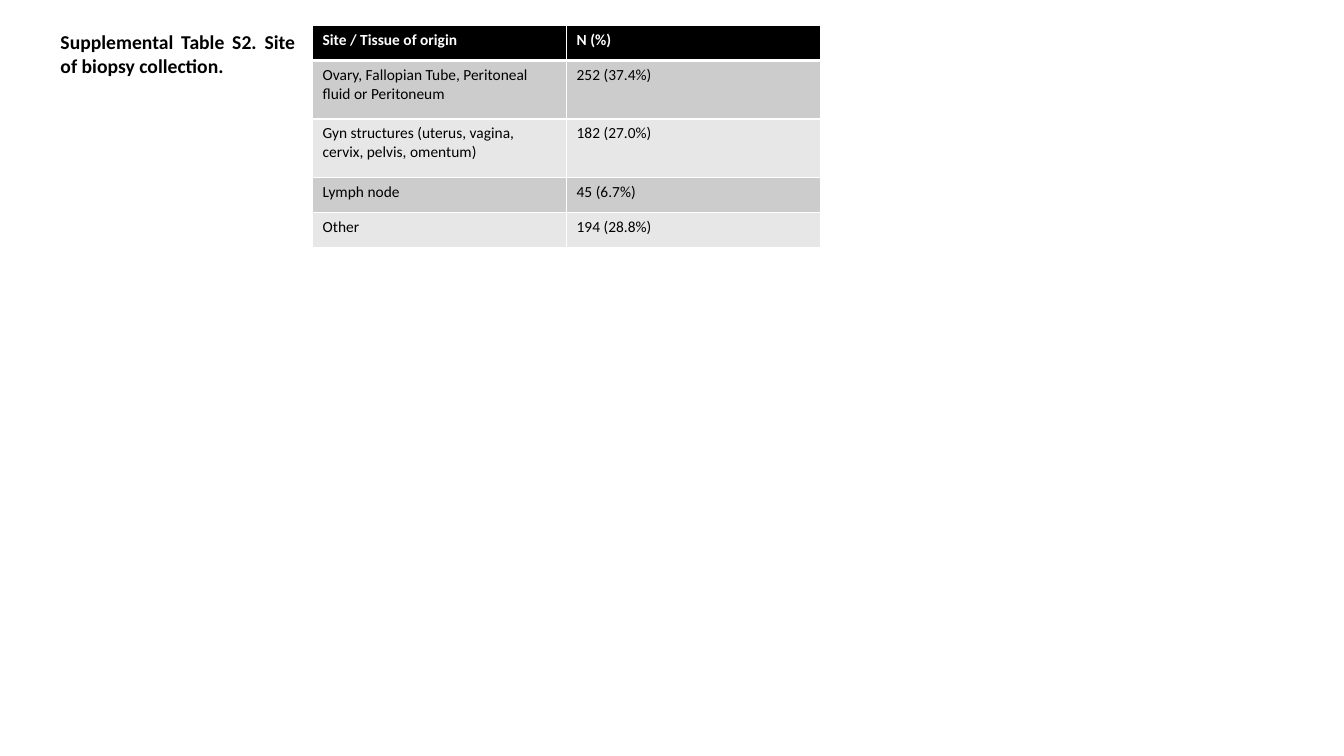
"""Build the slide listing the sites of biopsy collection."""
from dataclasses import dataclass

from lxml.etree import SubElement
from pptx import Presentation
from pptx.dml.color import RGBColor
from pptx.enum.text import MSO_ANCHOR, MSO_AUTO_SIZE, PP_ALIGN
from pptx.oxml.ns import qn
from pptx.slide import Slide
from pptx.table import _Cell as Cell
from pptx.util import Inches, Pt

FONT = "Calibri"
BLACK, WHITE = "000000", "FFFFFF"
BANDS = ("CCCCCC", "E7E7E7")


@dataclass(frozen=True)
class SiteRow:
    site: str
    count: str
    height: float = 0.35


HEADER = SiteRow("Site / Tissue of origin", "N (%)")
SITES = [
    SiteRow("Ovary, Fallopian Tube, Peritoneal fluid or Peritoneum", "252 (37.4%)", 0.58),
    SiteRow("Gyn structures (uterus, vagina, cervix, pelvis, omentum)", "182 (27.0%)", 0.58),
    SiteRow("Lymph node", "45 (6.7%)"),
    SiteRow("Other", "194 (28.8%)"),
]


def rgb(color: str) -> RGBColor:
    return RGBColor.from_string(color)


def style_font(p, size: float, color: str, bold: bool) -> None:
    p.font.name = FONT
    p.font.size = Pt(size)
    p.font.bold = bold
    p.font.color.rgb = rgb(color)


def add_title(s: Slide, text: str) -> None:
    sp = s.shapes.title
    sp.left, sp.top = Inches(0.5), Inches(0.25)
    sp.width, sp.height = Inches(2.53), Inches(0.57)
    tf = sp.text_frame
    tf.text = text
    tf.word_wrap = True
    tf.auto_size = MSO_AUTO_SIZE.SHAPE_TO_FIT_TEXT
    tf.vertical_anchor = MSO_ANCHOR.TOP
    p = tf.paragraphs[0]
    p.alignment = PP_ALIGN.JUSTIFY
    style_font(p, 14, BLACK, True)


def set_borders(cell: Cell, top: float, bottom: float) -> None:
    tc_pr = cell._tc.get_or_add_tcPr()
    for side, width in (("L", 1), ("R", 1), ("T", top), ("B", bottom)):
        ln = SubElement(tc_pr, qn(f"a:ln{side}"), w=str(Pt(width)))
        SubElement(SubElement(ln, qn("a:solidFill")), qn("a:srgbClr"), val=WHITE)


def fill_cell(cell: Cell, text: str, row: int) -> None:
    is_header = row == 0
    set_borders(cell, 3 if row == 1 else 1, 3 if is_header else 1)
    cell.fill.solid()
    cell.fill.fore_color.rgb = rgb(BLACK if is_header else BANDS[(row - 1) % 2])
    cell.text = text
    style_font(cell.text_frame.paragraphs[0], 11, WHITE if is_header else BLACK, is_header)


def add_site_table(s: Slide, rows: list[SiteRow]) -> None:
    height = sum(row.height for row in rows)
    table = s.shapes.add_table(
        len(rows), 2, Inches(3.1), Inches(0.25), Inches(5.04), Inches(height)
    ).table
    for i, row in enumerate(rows):
        table.rows[i].height = Inches(row.height)
        for j, text in enumerate((row.site, row.count)):
            fill_cell(table.cell(i, j), text, i)


def main() -> None:
    prs = Presentation()
    prs.slide_width, prs.slide_height = Inches(13.33), Inches(7.5)
    s = prs.slides.add_slide(prs.slide_layouts[5])
    add_title(s, "Supplemental Table S2. Site of biopsy collection.")
    add_site_table(s, [HEADER, *SITES])
    prs.save("out.pptx")


if __name__ == "__main__":
    main()
